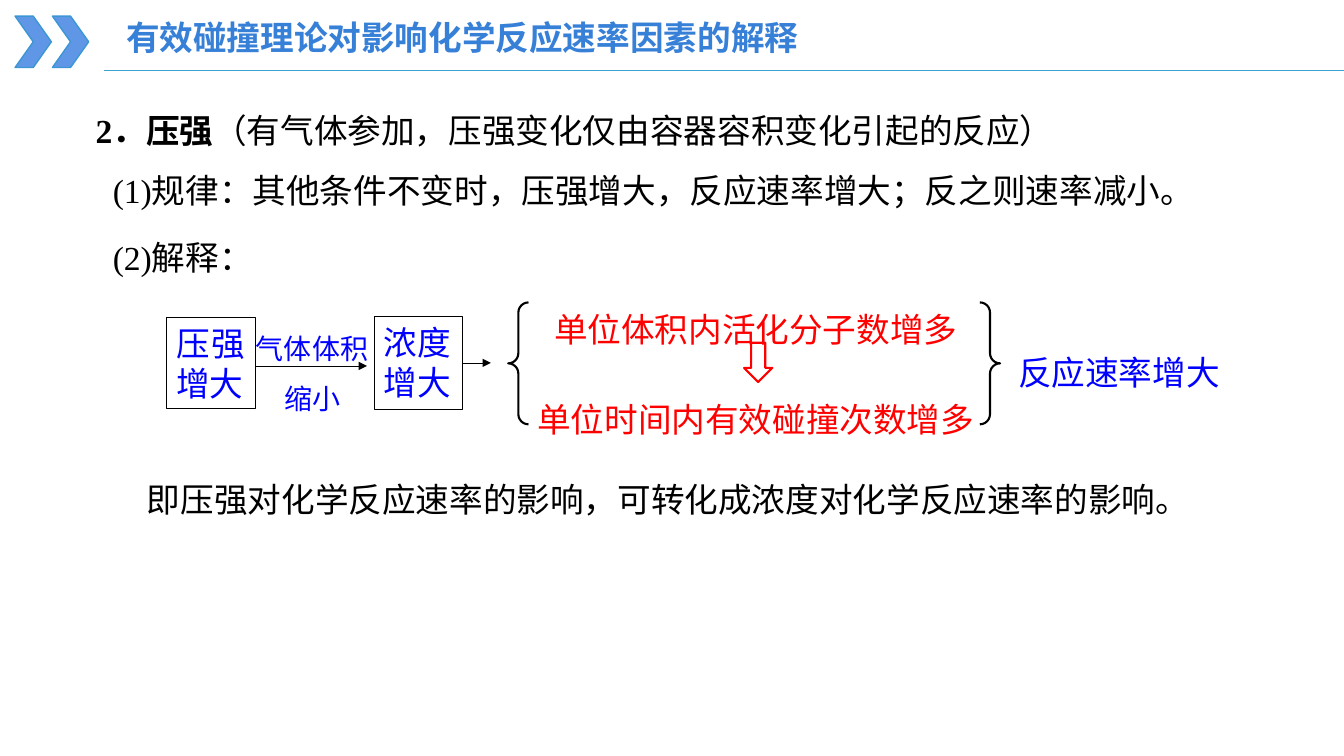
from lxml.etree import SubElement
from pptx import Presentation
from pptx.dml.color import RGBColor
from pptx.enum.shapes import MSO_CONNECTOR, MSO_SHAPE as SHAPE
from pptx.enum.text import MSO_ANCHOR, MSO_AUTO_SIZE, PP_ALIGN as ALIGN
from pptx.oxml.ns import qn
from pptx.util import Pt

PX = 9144  # 100 px to the inch
COLORS = {"black": "000000", "blue": "0000FF", "red": "FF0000", "title": "3780D7",
          "chevron": "6096E6", "chevron line": "3B96D3", "rule": "3DA1D2"}
CJK, TIMES = "Noto Sans CJK SC", "Times New Roman"


def write(shape, paragraphs, color, size=24, **formats):
    """Each paragraph is a list of (text, font, bold) runs."""
    frame = shape.text_frame
    frame.word_wrap = True
    frame.auto_size = MSO_AUTO_SIZE.NONE
    frame.vertical_anchor = MSO_ANCHOR.TOP
    for index, runs in enumerate(paragraphs):
        paragraph = frame.add_paragraph() if index else frame.paragraphs[0]
        for name, value in formats.items():
            setattr(paragraph, name, value)
        for text, font_name, bold in runs:
            run = paragraph.add_run()
            run.text = text
            values = {"name": font_name, "size": Pt(size), "bold": bold}
            for name, value in values.items():
                setattr(run.font, name, value)
            run.font.color.rgb = RGBColor.from_string(COLORS[color])
            SubElement(run.font._element, qn("a:ea"), typeface=CJK)
    return frame


def add_line(x1, y1, x2, y2, color, arrow=False):
    line = slide.shapes.add_connector(
        MSO_CONNECTOR.STRAIGHT, x1 * PX, y1 * PX, x2 * PX, y2 * PX)
    line.line.color.rgb = RGBColor.from_string(COLORS[color])
    line.line.width = Pt(0.5)
    if arrow:
        SubElement(line.line._get_or_add_ln(), qn("a:tailEnd"), type="triangle")
    SubElement(line._element.spPr, qn("a:effectLst"))
    return line


presentation = Presentation()
presentation.slide_width, presentation.slide_height = 1333 * PX, 750 * PX
slide = presentation.slides.add_slide(presentation.slide_layouts[5])

# Title and the rule below it
title = slide.shapes.title
title.left, title.top, title.width, title.height = [v * PX for v in (115, 12, 762, 50)]
write(title, [[("有效碰撞理论对影响化学反应速率因素的解释", CJK, True)]], "title",
      alignment=ALIGN.LEFT)
add_line(103, 70, 1333, 70, "rule")

# Preset shapes: kind, box, fill, line colour, line width
shapes = {}
for part, kind, box, fill, color, width in [
    ("chevron 1", SHAPE.CHEVRON, (15, 16, 36, 51), "chevron", "chevron line", 1),
    ("chevron 2", SHAPE.CHEVRON, (52, 16, 36, 51), "chevron", "chevron line", 1),
    ("pressure", SHAPE.RECTANGLE, (165, 315, 88, 90), None, "black", 0.75),
    ("concentration", SHAPE.RECTANGLE, (371, 314, 88, 92), None, "black", 0.75),
    ("braces", SHAPE.DOUBLE_BRACE, (504, 300, 488, 121), None, "black", 1.5),
    ("down arrow", SHAPE.DOWN_ARROW, (738, 340, 28, 39), None, "red", 1.5),
]:
    shape = slide.shapes.add_shape(kind, *[v * PX for v in box])
    shape.shadow.inherit = False
    if fill:
        shape.fill.solid()
        shape.fill.fore_color.rgb = RGBColor.from_string(COLORS[fill])
    else:
        shape.fill.background()
    shape.line.color.rgb = RGBColor.from_string(COLORS[color])
    shape.line.width = Pt(width)
    shapes[part] = shape

# Words in the two framed boxes
write(shapes["pressure"], [[("压强增大", CJK, False)]], "blue", alignment=ALIGN.JUSTIFY)
write(shapes["concentration"], [[("浓度", CJK, False)], [("增大", CJK, False)]], "blue",
      alignment=ALIGN.JUSTIFY)

# Arrows of the flow
add_line(253, 363, 364, 363, "black", arrow=True)
add_line(459, 360, 487, 360, "black", arrow=True).begin_connect(shapes["concentration"], 3)

# Text boxes: box, paragraphs, colour, size, alignment, line spacing
heading = [("2", TIMES, True), ("．", CJK, True), ("压强", TIMES, True), ("（", TIMES, False),
           ("有气体参加，压强变化仅由容器容积变化引起的反应", CJK, False), ("）", TIMES, False)]
rule = [("(1)规律：其他条件不变时，压强增大，反应速率增大；反之则速率减小。", TIMES, False)]
frames = []
for box, paragraphs, color, size, alignment, spacing in [
    ((85, 84, 1141, 131), [heading, rule], "black", 24, ALIGN.JUSTIFY, 1.5),
    ((522, 262, 455, 180), [[("单位体积内活化分子数增多", TIMES, False)],
                            [("单位时间内有效碰撞次数增多", TIMES, False)]],
     "red", 24, ALIGN.CENTER, 2.0),
    ((229, 307, 161, 111), [[("气体体积", CJK, False)], [("缩小", CJK, False)]],
     "blue", 20, ALIGN.CENTER, 1.5),
    ((1000, 324, 230, 64), [[("反应速率增大", TIMES, False)]],
     "blue", 24, ALIGN.JUSTIFY, 1.5),
    ((136, 450, 1103, 71),
     [[("即压强对化学反应速率的影响，可转化成浓度对化学反应速率的影响。", TIMES, False)]],
     "black", 24, ALIGN.JUSTIFY, 1.5),
    ((102, 210, 175, 71), [[("(2)解释：", TIMES, False)]],
     "black", 24, ALIGN.JUSTIFY, 1.5),
]:
    text_box = slide.shapes.add_textbox(*[v * PX for v in box])
    frames.append(write(text_box, paragraphs, color, size,
                        alignment=alignment, line_spacing=spacing))

# Indent of item (1) and the gap between the red lines
frames[0].paragraphs[1]._p.get_or_add_pPr().set("marL", str(17 * PX))
frames[1].paragraphs[1].space_before = Pt(6)

presentation.save("out.pptx")
